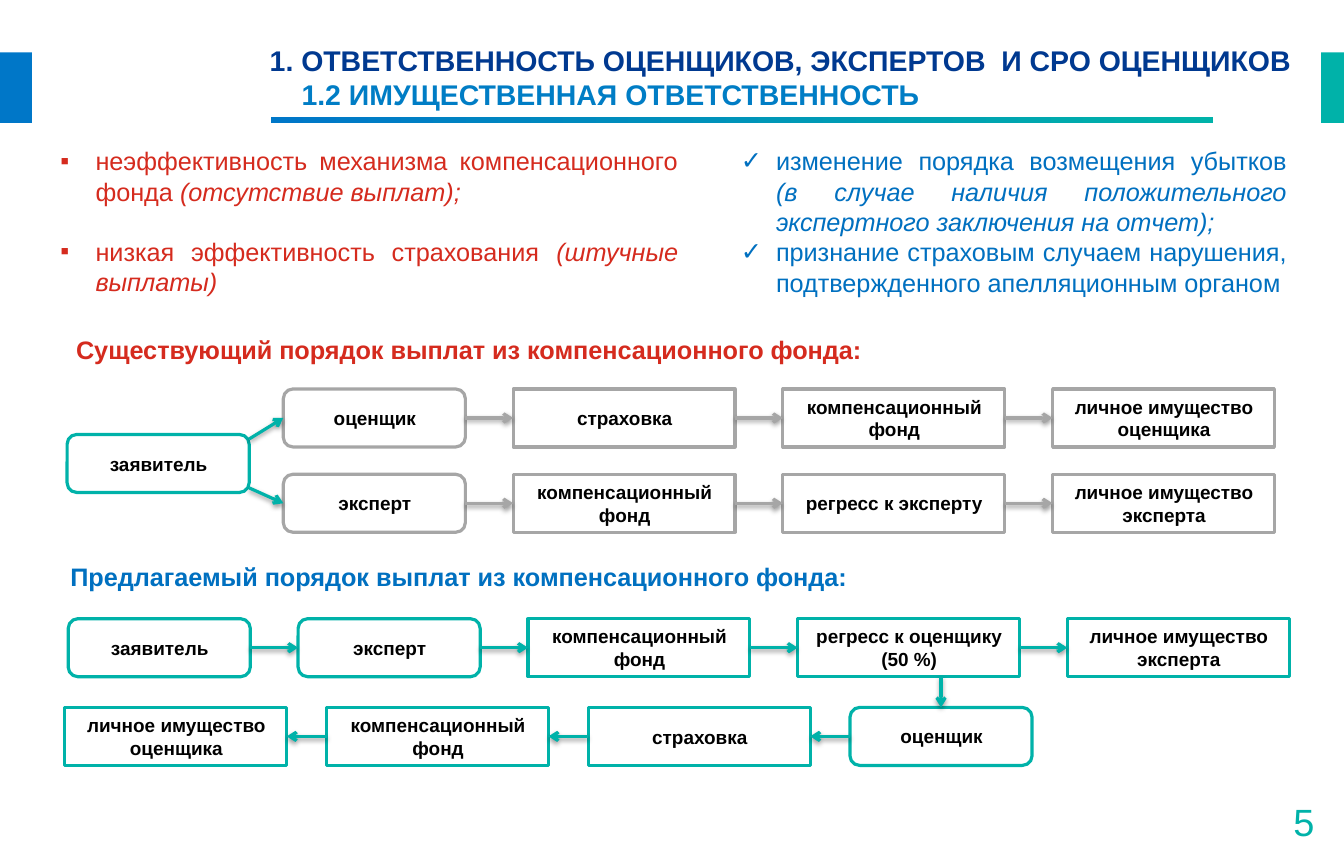
"""Build the slide on property liability and compensation fund payouts."""
from dataclasses import dataclass

from lxml import etree
from pptx import Presentation
from pptx.dml.color import RGBColor
from pptx.enum.shapes import MSO_CONNECTOR, MSO_SHAPE
from pptx.enum.text import MSO_ANCHOR, MSO_AUTO_SIZE, PP_ALIGN
from pptx.oxml.ns import qn
from pptx.util import Cm, Inches, Pt

RECT, ROUNDED = MSO_SHAPE.RECTANGLE, MSO_SHAPE.ROUNDED_RECTANGLE
STRAIGHT = MSO_CONNECTOR.STRAIGHT
TOP, MIDDLE = MSO_ANCHOR.TOP, MSO_ANCHOR.MIDDLE
LEFT, CENTER, RIGHT, JUSTIFY = PP_ALIGN.LEFT, PP_ALIGN.CENTER, PP_ALIGN.RIGHT, PP_ALIGN.JUSTIFY


@dataclass(frozen=True)
class Theme:
    font: str = "Arial"
    navy: str = "003990"
    azure: str = "007DC5"
    cobalt: str = "0077C8"
    blue: str = "0070C0"
    red: str = "D52B1E"
    teal: str = "00B2A9"
    grey: str = "A6A6A6"
    white: str = "FFFFFF"
    black: str = "000000"
    title: int = 18
    body: int = 16
    step: int = 12
    number: int = 24
    line: int = 2


THEME = Theme()
TITLE_AREA = (2.37, 0.38, 9.29, 0.6)
TITLE = [
    ("1. ОТВЕТСТВЕННОСТЬ ОЦЕНЩИКОВ, ЭКСПЕРТОВ  И СРО ОЦЕНЩИКОВ", THEME.navy, 0),
    ("1.2 ИМУЩЕСТВЕННАЯ ОТВЕТСТВЕННОСТЬ", THEME.azure, 0.28),
]
LISTS = [
    ((0.43, 1.23, 5.63, 1.5), THEME.red, "▪", 19, [
        ("неэффективность механизма компенсационного фонда ", "(отсутствие выплат);"),
        ("низкая эффективность страхования ", "(штучные выплаты)"),
    ]),
    ((6.41, 1.23, 5, 1.5), THEME.blue, "✓", 0, [
        ("изменение порядка возмещения убытков ",
         "(в случае наличия положительного экспертного заключения на отчет);"),
        ("признание страховым случаем нарушения, подтвержденного апелляционным органом", ""),
    ]),
]
HEADINGS = [
    ("Существующий порядок выплат из компенсационного фонда:", 0.57, 2.89, THEME.red),
    ("Предлагаемый порядок выплат из компенсационного фонда:", 0.52, 4.89, THEME.blue),
]
PERSONS = {"заявитель", "оценщик", "эксперт"}
FUND = "компенсационный фонд"
CHAINS = {
    "applicant": (0.59, 3.82, 0, THEME.teal, ["заявитель"]),
    "appraiser": (2.49, 3.42, 0.42, THEME.grey,
                  ["оценщик", "страховка", FUND, "личное имущество оценщика"]),
    "expert": (2.49, 4.17, 0.42, THEME.grey,
               ["эксперт", FUND, "регресс к эксперту", "личное имущество эксперта"]),
    "proposed": (0.6, 5.44, 0.42, THEME.teal,
                 ["заявитель", "эксперт", FUND, "регресс к оценщику (50 %)",
                  "личное имущество эксперта"]),
    "recourse": (0.57, 6.22, 0.35, THEME.teal,
                 ["личное имущество оценщика", FUND, "страховка", "оценщик"]),
}
BACKWARD = {"recourse"}
PERSON_WIDTH, STAGE_WIDTH, STEP_HEIGHT = 1.6, 1.95, 0.51
CORNER = 0.04


def inches(values):
    return [Inches(value) for value in values]


def style(run, size, colour, bold=False, italic=False):
    run.font.name, run.font.size = THEME.font, Pt(size)
    run.font.bold, run.font.italic = bold, italic
    run.font.color.rgb = RGBColor.from_string(colour)


def indent(paragraph, left, first=0):
    properties = paragraph._p.get_or_add_pPr()
    properties.set("marL", str(Inches(left)))
    properties.set("indent", str(Inches(first)))
    return properties


def place(placeholder, area):
    placeholder.left, placeholder.top, placeholder.width, placeholder.height = inches(area)
    frame = placeholder.text_frame
    frame.auto_size, frame.vertical_anchor, frame.word_wrap = MSO_AUTO_SIZE.NONE, TOP, True
    return frame


def paragraphs(frame, count):
    return [frame.paragraphs[0]] + [frame.add_paragraph() for _ in range(count - 1)]


def add_title(placeholder):
    frame = place(placeholder, TITLE_AREA)
    frame.margin_left = frame.margin_right = frame.margin_top = frame.margin_bottom = 0
    for paragraph, (text, colour, left) in zip(paragraphs(frame, len(TITLE)), TITLE):
        indent(paragraph, left)
        paragraph.alignment = LEFT
        paragraph.text = text
        style(paragraph.runs[0], THEME.title, colour, bold=True)


def add_list(placeholder, area, colour, mark, gap, points):
    frame = place(placeholder, area)
    for order, (paragraph, parts) in enumerate(zip(paragraphs(frame, len(points)), points)):
        properties = indent(paragraph, 0.31, -0.31)
        etree.SubElement(properties, qn("a:buFont"), typeface=THEME.font)
        etree.SubElement(properties, qn("a:buChar"), char=mark)
        paragraph.alignment = JUSTIFY
        paragraph.space_before = Pt(gap if order else 0)
        for italic, text in enumerate(parts):
            if text:
                run = paragraph.add_run()
                run.text = text
                style(run, THEME.body, colour, italic=bool(italic))


def add_label(slide, text, area, size, colour, alignment, bold=False):
    frame = slide.shapes.add_textbox(*inches(area)).text_frame
    frame.word_wrap = True
    frame.text = text
    frame.paragraphs[0].alignment = alignment
    style(frame.paragraphs[0].runs[0], size, colour, bold)


def add_block(slide, area, colour, preset=RECT):
    block = slide.shapes.add_shape(preset, *inches(area))
    block.shadow.inherit = False
    block.fill.solid()
    block.fill.fore_color.rgb = RGBColor.from_string(colour)
    block.line.fill.background()
    return block


def add_step(slide, text, area, colour):
    step = add_block(slide, area, THEME.white, ROUNDED if text in PERSONS else RECT)
    step.line.color.rgb, step.line.width = RGBColor.from_string(colour), Pt(THEME.line)
    frame = step.text_frame
    frame.word_wrap, frame.vertical_anchor = True, MIDDLE
    frame.text = text
    indent(frame.paragraphs[0], 0.01)
    frame.paragraphs[0].alignment = CENTER
    style(frame.paragraphs[0].runs[0], THEME.step, THEME.black, bold=True)


def add_arrow(slide, start, end, colour):
    arrow = slide.shapes.add_connector(STRAIGHT, *inches(start + end))
    arrow.line.color.rgb, arrow.line.width = RGBColor.from_string(colour), Pt(THEME.line)
    etree.SubElement(arrow.line._get_or_add_ln(), qn("a:tailEnd"), type="arrow")
    effects = etree.SubElement(arrow._element.spPr, qn("a:effectLst"))
    shadow = etree.SubElement(effects, qn("a:outerShdw"), blurRad=str(Pt(3.1)),
                              dist=str(Pt(1.6)), dir="5400000", rotWithShape="0")
    tint = etree.SubElement(shadow, qn("a:srgbClr"), val=THEME.black)
    etree.SubElement(tint, qn("a:alpha"), val="38000")


def chain_areas(left, top, gap, steps):
    areas = []
    for text in steps:
        width = PERSON_WIDTH if text in PERSONS else STAGE_WIDTH
        areas.append((left, top, width, STEP_HEIGHT))
        left += width + gap
    return areas


def add_chains(slide):
    areas = {}
    for name, (left, top, gap, colour, steps) in CHAINS.items():
        areas[name] = chain_areas(left, top, gap, steps)
        for text, area in zip(steps, areas[name]):
            add_step(slide, text, area, colour)
        level = top + STEP_HEIGHT / 2
        for before, after in zip(areas[name], areas[name][1:]):
            ends = [(before[0] + before[2], level), (after[0], level)]
            add_arrow(slide, *(ends[::-1] if name in BACKWARD else ends), colour)

    left, top, width, height = areas["applicant"][0]
    for name, exit_level in (("appraiser", top + CORNER), ("expert", top + height - CORNER)):
        target = areas[name][0]
        add_arrow(slide, (left + width, exit_level),
                  (target[0], target[1] + STEP_HEIGHT / 2), THEME.teal)
    appraiser = areas["recourse"][-1]
    middle = appraiser[0] + PERSON_WIDTH / 2
    add_arrow(slide, (middle, areas["proposed"][0][1] + STEP_HEIGHT),
              (middle, appraiser[1]), THEME.teal)


def main():
    deck = Presentation()
    deck.slide_width = Cm(30)
    deck.slide_height = Inches(7.5)
    slide = deck.slides.add_slide(deck.slide_layouts[3])
    title, *bodies = slide.placeholders

    add_block(slide, (0, 0.46, 0.28, 0.62), THEME.cobalt)
    add_block(slide, (11.61, 0.46, 0.2, 0.62), THEME.teal)
    rule = add_block(slide, (2.38, 1.03, 8.28, 0.05), THEME.cobalt)
    rule.fill.gradient()
    rule.fill.gradient_angle = 0
    for stop, colour in zip(rule.fill.gradient_stops, (THEME.cobalt, THEME.teal)):
        stop.color.rgb = RGBColor.from_string(colour)

    add_title(title)
    for body, content in zip(bodies, LISTS):
        add_list(body, *content)
    for text, left, top, colour in HEADINGS:
        add_label(slide, text, (left, top, 9.48, 0.37), THEME.body, colour, JUSTIFY, bold=True)
    add_chains(slide)
    add_label(slide, "5", (10.67, 6.97, 0.98, 0.4), THEME.number, THEME.teal, RIGHT)
    deck.save("out.pptx")


if __name__ == "__main__":
    main()
